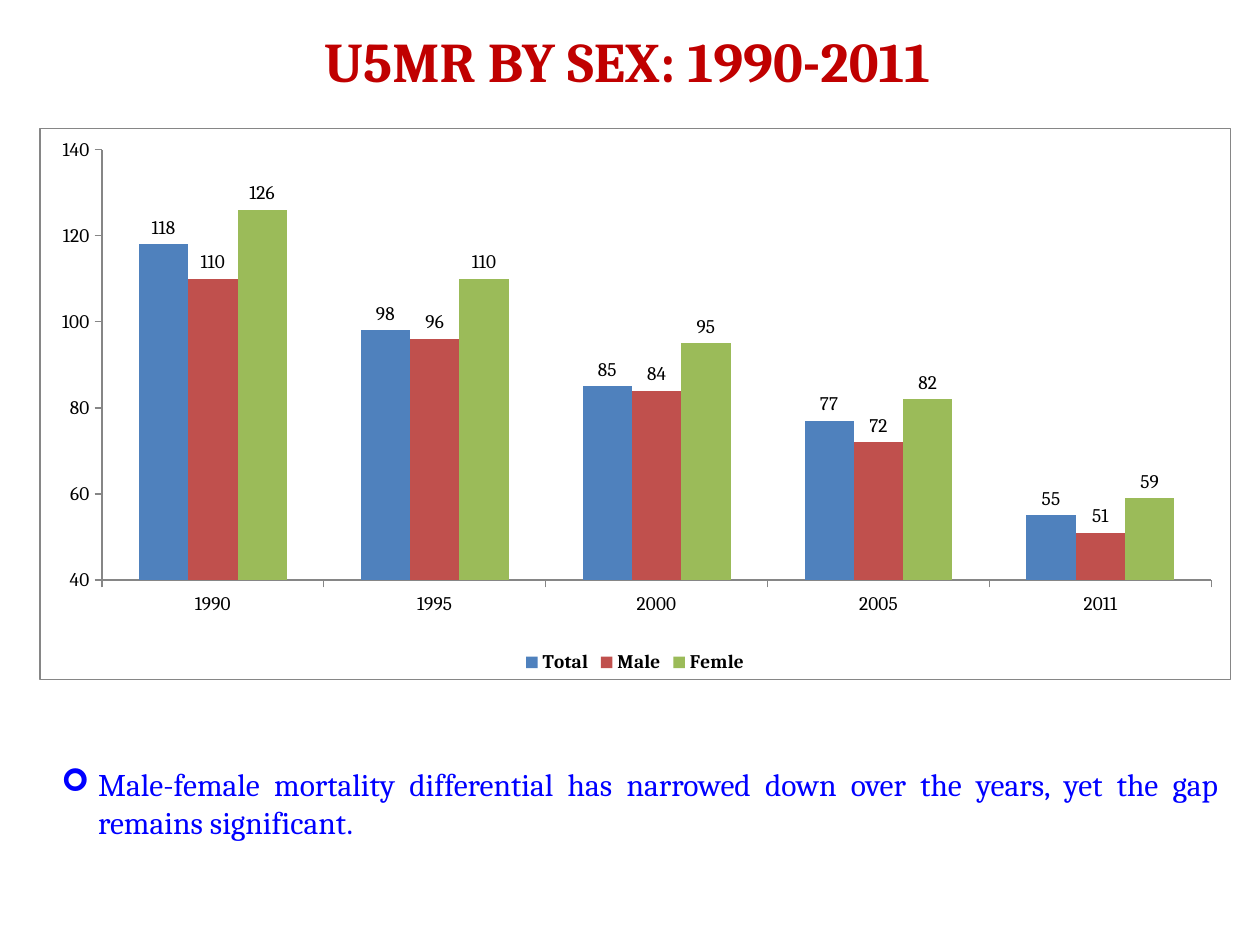
from dataclasses import dataclass

from lxml import etree
from pptx import Presentation
from pptx.chart.data import CategoryChartData
from pptx.dml.color import RGBColor
from pptx.enum.chart import XL_CHART_TYPE, XL_LABEL_POSITION, XL_LEGEND_POSITION, XL_TICK_MARK
from pptx.enum.text import PP_ALIGN
from pptx.oxml import parse_xml
from pptx.oxml.ns import nsdecls, qn
from pptx.util import Pt

COLUMNS = XL_CHART_TYPE.COLUMN_CLUSTERED
ABOVE_BAR = XL_LABEL_POSITION.OUTSIDE_END
BOTTOM = XL_LEGEND_POSITION.BOTTOM
TICK_OUT, TICK_NONE = XL_TICK_MARK.OUTSIDE, XL_TICK_MARK.NONE
CENTER, JUSTIFY = PP_ALIGN.CENTER, PP_ALIGN.JUSTIFY


@dataclass(frozen=True)
class Theme:
    font: str = "Cambria"
    title: str = "C00000"
    finding: str = "0000FF"
    chart_text: str = "000000"
    line: str = "868686"
    title_size: int = 32
    finding_size: int = 18
    chart_size: int = 11


THEME = Theme()

YEARS = ["1990", "1995", "2000", "2005", "2011"]
RATES = [
    ("Total", "4F81BD", [118, 98, 85, 77, 55]),
    ("Male", "C0504D", [110, 96, 84, 72, 51]),
    ("Femle", "9BBB59", [126, 110, 95, 82, 59]),
]


def style_font(font, size, color, bold=False):
    font.name = THEME.font
    font.size = Pt(size)
    font.bold = bold
    font.color.rgb = RGBColor.from_string(color)


def add_text(slide, box, text, align, size, color, bold=False):
    """Add a one-paragraph text box and return its paragraph."""
    frame = slide.shapes.add_textbox(*map(Pt, box)).text_frame
    frame.word_wrap = True
    frame.text = text
    paragraph = frame.paragraphs[0]
    paragraph.alignment = align
    style_font(paragraph.runs[0].font, size, color, bold)
    return paragraph


presentation = Presentation()
presentation.slide_width, presentation.slide_height = Pt(720), Pt(540)
slide = presentation.slides.add_slide(presentation.slide_layouts[6])

# Mortality chart
rates = CategoryChartData()
rates.categories = YEARS
for name, _, values in RATES:
    rates.add_series(name, values)
chart = slide.shapes.add_chart(
    COLUMNS, Pt(22.5), Pt(73), Pt(681), Pt(315.5), rates
).chart
style_font(chart.font, THEME.chart_size, THEME.chart_text)
chart.has_title = False
chart.has_legend = True
chart.legend.position = BOTTOM
chart.legend.include_in_layout = False
style_font(chart.legend.font, THEME.chart_size, THEME.chart_text, bold=True)

bars = chart.plots[0]
bars.gap_width = 150
bars.overlap = 0
bars.vary_by_categories = False
for series, (_, color, _) in zip(bars.series, RATES):
    series.format.fill.solid()
    series.format.fill.fore_color.rgb = RGBColor.from_string(color)
    labels = series.data_labels
    labels.show_value = True
    labels.position = ABOVE_BAR
    style_font(labels.font, THEME.chart_size, THEME.chart_text)

for axis in (chart.category_axis, chart.value_axis):
    axis.has_major_gridlines = False
    axis.major_tick_mark = TICK_OUT
    axis.minor_tick_mark = TICK_NONE
    axis.format.line.color.rgb = RGBColor.from_string(THEME.line)
    axis.format.line.width = Pt(0.75)
    style_font(axis.tick_labels.font, THEME.chart_size, THEME.chart_text)
rate_axis = chart.value_axis
rate_axis.minimum_scale, rate_axis.maximum_scale = 40, 140
rate_axis.major_unit = 20

# Inner plot position, as fractions of the chart
plot_area = chart.element.find(".//" + qn("c:plotArea"))
for automatic in plot_area.findall(qn("c:layout")):
    plot_area.remove(automatic)
layout = parse_xml(f"<c:layout {nsdecls('c')}><c:manualLayout/></c:layout>")
for tag, value in [
    ("layoutTarget", "inner"), ("xMode", "edge"), ("yMode", "edge"),
    ("x", "0.052"), ("y", "0.039"), ("w", "0.932"), ("h", "0.781"),
]:
    etree.SubElement(layout[0], qn(f"c:{tag}")).set("val", value)
plot_area.insert(0, layout)

# Chart frame
chart.element.find(qn("c:chart")).addnext(parse_xml(
    f"<c:spPr {nsdecls('c', 'a')}><a:noFill/><a:ln w='{Pt(0.75)}'><a:solidFill>"
    f"<a:srgbClr val='{THEME.line}'/></a:solidFill></a:ln></c:spPr>"
))

# Finding
finding = add_text(
    slide, (28, 433.5, 675.5, 51),
    "Male-female mortality differential has narrowed down over the years, "
    "yet the gap remains significant.",
    JUSTIFY, THEME.finding_size, THEME.finding,
)
finding.space_before = Pt(0.2 * THEME.finding_size)
bullet = finding._p.get_or_add_pPr()
bullet.set("marL", str(Pt(21)))
bullet.set("indent", str(Pt(-21)))
etree.SubElement(bullet, qn("a:buFont")).set("typeface", "Wingdings")
etree.SubElement(bullet, qn("a:buChar")).set("char", "➢")

# Title
add_text(
    slide, (22.5, 11.5, 672, 46), "U5MR BY SEX: 1990-2011",
    CENTER, THEME.title_size, THEME.title, bold=True,
)

presentation.save("out.pptx")
